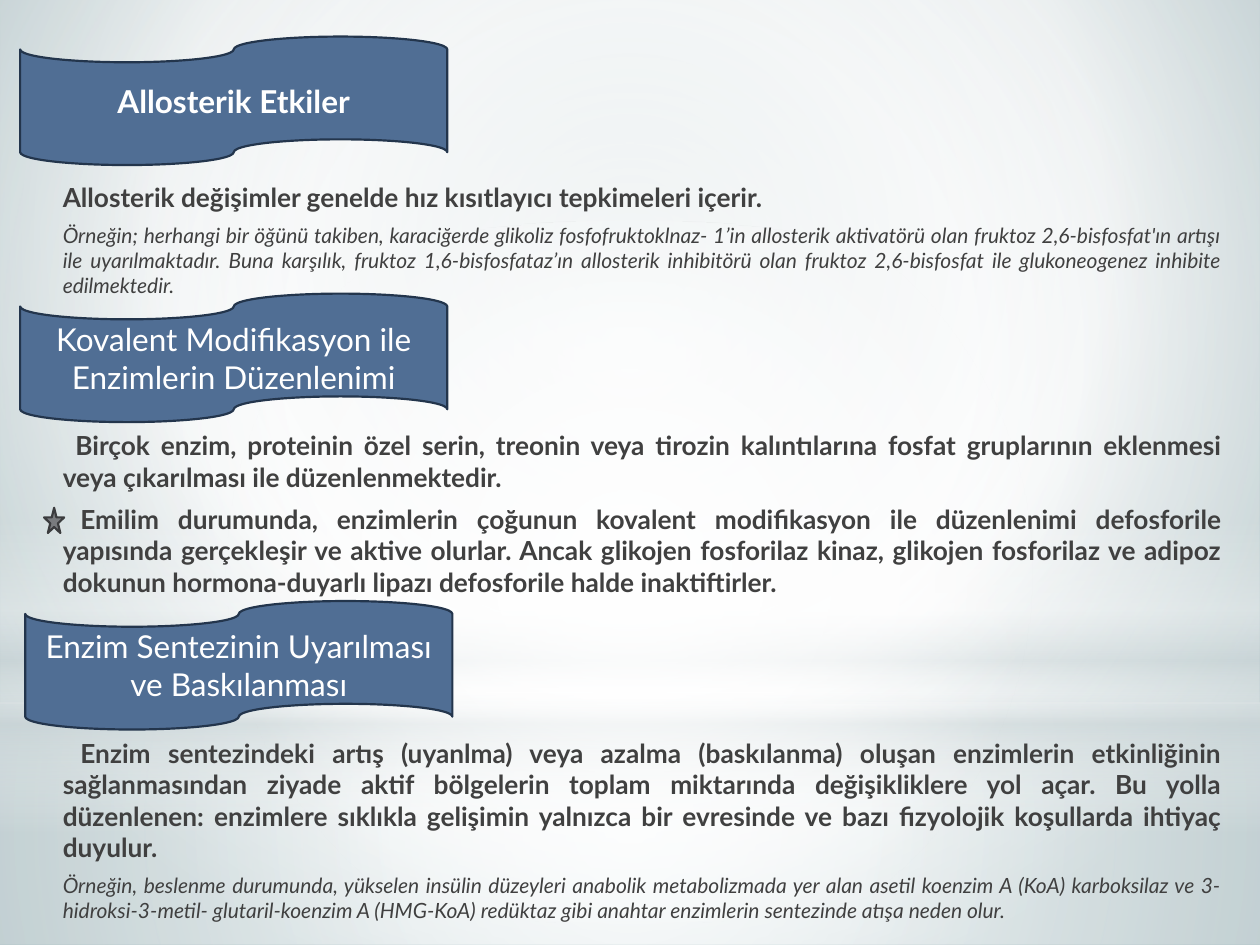
from dataclasses import dataclass

from lxml import etree
from pptx import Presentation
from pptx import util as u
from pptx.dml import color
from pptx.enum import shapes, text
from pptx.oxml import ns

FONT = "Lato"
COLORS = {
    "white": "FFFFFF", "mist": "CDD7D9", "sky": "C2D0D3", "teal": "9AB5BA",
    "tape": "506E94", "tape_line": "23354C", "star": "797B7E",
    "star_line": "3B3C3E", "body": "404040",
}


@dataclass
class Box:
    """Left, top, width and height as percentages of the slide."""
    left: float
    top: float
    width: float
    height: float


@dataclass
class Gradient:
    stops: list[tuple[int, str, int]]
    center: tuple[int, int, int, int] | None = (50, 50, 50, 50)


@dataclass
class Layer:
    kind: shapes.MSO_SHAPE
    box: Box
    gradient: Gradient


@dataclass
class Para:
    words: str
    example: bool = False
    indent: float = 0


@dataclass
class Section:
    heading: str
    tape: Box
    body: Box
    paras: list[Para]
    bold: bool = False


BACKDROP = Gradient([(0, "sky", 100), (60, "white", 100), (100, "teal", 100)],
                    (20, 10, 20, 60))
LAYERS = [
    Layer(shapes.MSO_SHAPE.RECTANGLE, Box(0, 74.4, 100, 25.6),
          Gradient([(0, "white", 91), (37, "white", 76), (100, "mist", 79)])),
    Layer(shapes.MSO_SHAPE.RECTANGLE, Box(0, 0, 100, 74.4),
          Gradient([(0, "white", 89), (48, "white", 62), (100, "mist", 79)])),
    Layer(shapes.MSO_SHAPE.RECTANGLE, Box(0, 54.93, 100, 33.33),
          Gradient([(0, "white", 0), (29, "white", 30), (45, "mist", 40),
                    (55, "white", 26), (65, "mist", 60), (100, "white", 0)], None)),
    Layer(shapes.MSO_SHAPE.OVAL, Box(0, 23.33, 100, 74.4),
          Gradient([(0, "white", 100), (56, "white", 0)])),
]
SECTIONS = [
    Section("Allosterik Etkiler", Box(1.6, 3.87, 33.9, 13.6), Box(3.5, 18.53, 94.5, 13.6), [
        Para("Allosterik değişimler genelde hız kısıtlayıcı tepkimeleri içerir."),
        Para("Örneğin; herhangi bir öğünü takiben, karaciğerde glikoliz fosfofruktoklnaz- 1’in "
             "allosterik aktivatörü olan fruktoz 2,6-bisfosfat'ın artışı ile uyarılmaktadır. "
             "Buna karşılık, fruktoz 1,6-bisfosfataz’ın allosterik inhibitörü olan fruktoz "
             "2,6-bisfosfat ile glukoneogenez inhibite edilmektedir.", example=True),
    ], bold=True),
    Section("Kovalent Modifikasyon ile Enzimlerin Düzenlenimi",
            Box(1.6, 31.07, 33.9, 13.6), Box(3.5, 44.8, 94.5, 20), [
        Para("Birçok enzim, proteinin özel serin, treonin veya tirozin kalıntılarına fosfat "
             "gruplarının eklenmesi veya çıkarılması ile düzenlenmektedir.", indent=0.1),
        Para("Emilim durumunda, enzimlerin çoğunun kovalent modifikasyon ile düzenlenimi "
             "defosforile yapısında gerçekleşir ve aktive olurlar. Ancak glikojen fosforilaz "
             "kinaz, glikojen fosforilaz ve adipoz dokunun hormona-duyarlı lipazı defosforile "
             "halde inaktiftirler.", indent=0.14),
    ]),
    Section("Enzim Sentezinin Uyarılması ve Baskılanması",
            Box(2, 63.6, 33.9, 13.6), Box(3.5, 77.33, 94.5, 17.87), [
        Para("Enzim sentezindeki artış (uyanlma) veya azalma (baskılanma) oluşan enzimlerin "
             "etkinliğinin sağlanmasından ziyade aktif bölgelerin toplam miktarında "
             "değişikliklere yol açar. Bu yolla düzenlenen: enzimlere sıklıkla gelişimin "
             "yalnızca bir evresinde ve bazı fizyolojik koşullarda ihtiyaç duyulur.", indent=0.14),
        Para("Örneğin, beslenme durumunda, yükselen insülin düzeyleri anabolik metabolizmada "
             "yer alan asetil koenzim A (KoA) karboksilaz ve 3-hidroksi-3-metil- "
             "glutaril-koenzim A (HMG-KoA) redüktaz gibi anahtar enzimlerin sentezinde "
             "atışa neden olur.", example=True),
    ]),
]
STAR = Box(3.5, 53.73, 1.6, 2.67)

prs = Presentation()
prs.slide_width, prs.slide_height = u.Inches(10), u.Inches(7.5)


def rgb(name: str) -> color.RGBColor:
    return color.RGBColor.from_string(COLORS[name])


def place(box: Box) -> list[int]:
    w, h = prs.slide_width, prs.slide_height
    return [round(share * side / 100) for share, side in
            ((box.left, w), (box.top, h), (box.width, w), (box.height, h))]


def add_gradient(solid, gradient: Gradient) -> None:
    grad = etree.Element(ns.qn("a:gradFill"), rotWithShape="1")
    stops = etree.SubElement(grad, ns.qn("a:gsLst"))
    for pos, name, alpha in gradient.stops:
        gs = etree.SubElement(stops, ns.qn("a:gs"), pos=str(pos * 1000))
        clr = etree.SubElement(gs, ns.qn("a:srgbClr"), val=COLORS[name])
        if alpha < 100:
            etree.SubElement(clr, ns.qn("a:alpha"), val=str(alpha * 1000))
    if gradient.center:
        circle = etree.SubElement(grad, ns.qn("a:path"), path="circle")
        edges = {k: str(v * 1000) for k, v in zip("ltrb", gradient.center)}
        etree.SubElement(circle, ns.qn("a:fillToRect"), edges)
    else:
        etree.SubElement(grad, ns.qn("a:lin"), ang="5400000", scaled="0")
    solid.getparent().replace(solid, grad)


def add_shape(s, kind: shapes.MSO_SHAPE, box: Box, fill: str, line: str | None = None):
    sp = s.shapes.add_shape(kind, *place(box))
    sp.shadow.inherit = False
    sp.fill.solid()
    sp.fill.fore_color.rgb = rgb(fill)
    if line:
        sp.line.color.rgb = rgb(line)
        sp.line.width = u.Pt(1.25)
    else:
        sp.line.fill.background()
    return sp


def style(p, size: int, name: str, bold: bool, italic: bool = False) -> None:
    for r in p.runs:
        r.font.name, r.font.size = FONT, u.Pt(size)
        r.font.bold, r.font.italic = bold, italic
        r.font.color.rgb = rgb(name)


def add_tape(s, section: Section) -> None:
    sp = add_shape(s, shapes.MSO_SHAPE.FLOWCHART_PUNCHED_TAPE, section.tape, "tape", "tape_line")
    tf = sp.text_frame
    tf.word_wrap = True
    tf.vertical_anchor = text.MSO_ANCHOR.MIDDLE
    tf.text = section.heading
    p = tf.paragraphs[0]
    p.alignment = text.PP_ALIGN.CENTER
    style(p, 18, "white", section.bold)


def add_body(s, section: Section) -> None:
    tf = s.shapes.add_textbox(*place(section.body)).text_frame
    tf.word_wrap = True
    for i, para in enumerate(section.paras):
        p = tf.add_paragraph() if i else tf.paragraphs[0]
        p.text = para.words
        p.alignment = text.PP_ALIGN.JUSTIFY
        size = 12 if para.example else 15
        p.space_before, p.space_after = u.Pt(size * 0.2), u.Pt(3)
        pPr = p._p.get_or_add_pPr()
        pPr.set("marL", str(u.Inches(0.05)))
        pPr.set("indent", str(u.Inches(para.indent)))
        style(p, size, "body", not para.example, para.example)


def main() -> None:
    s = prs.slides.add_slide(prs.slide_layouts[6])
    s.background.fill.solid()
    add_gradient(s.element.xpath(".//p:bgPr/a:solidFill")[0], BACKDROP)
    for layer in LAYERS:
        sp = add_shape(s, layer.kind, layer.box, "white")
        add_gradient(sp.element.xpath("./p:spPr/a:solidFill")[0], layer.gradient)
    for section in SECTIONS:
        add_body(s, section)
        add_tape(s, section)
    add_shape(s, shapes.MSO_SHAPE.STAR_5_POINT, STAR, "star", "star_line")
    prs.save("out.pptx")


if __name__ == "__main__":
    main()
